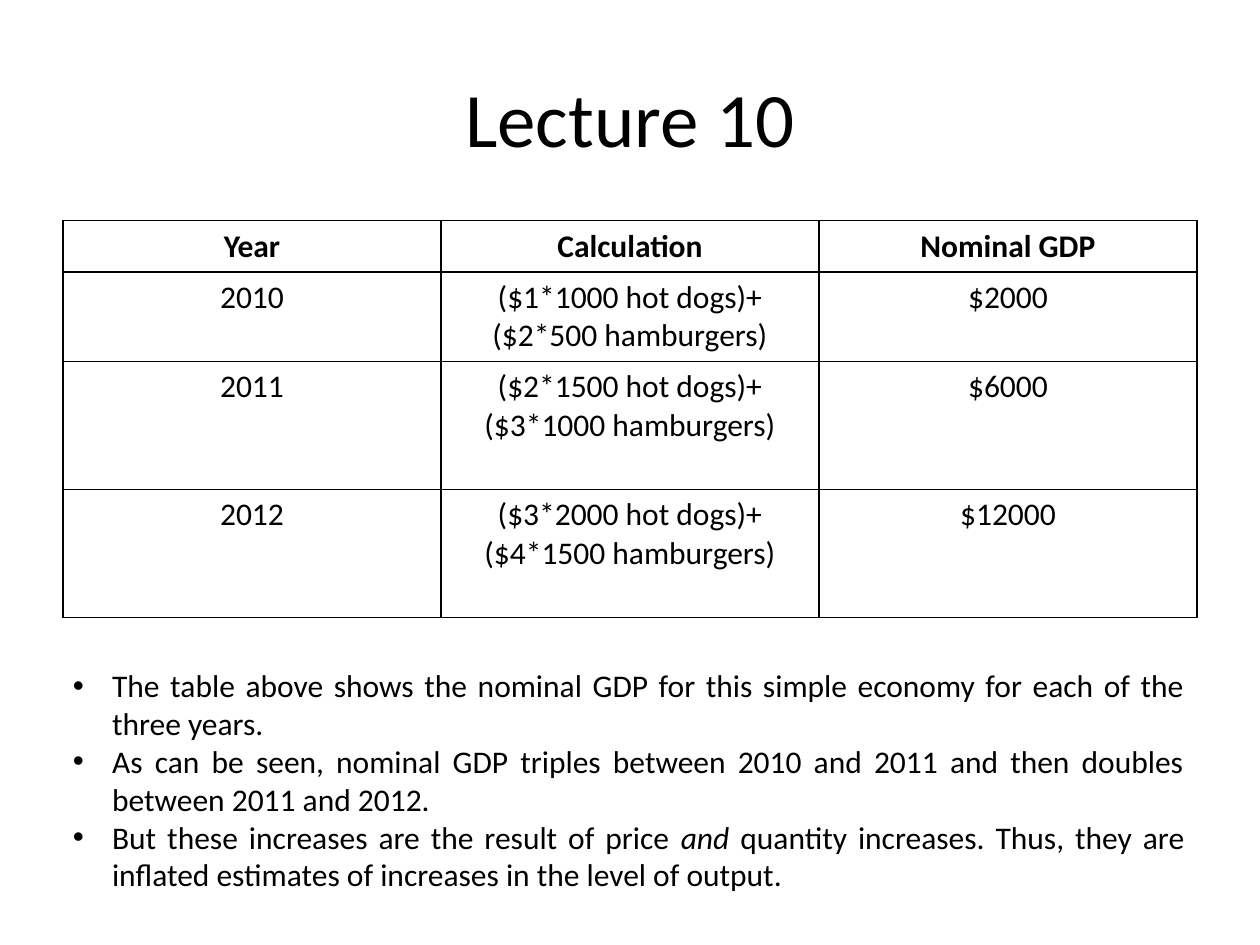
from lxml.etree import SubElement
from pptx import Presentation
from pptx.dml.color import RGBColor
from pptx.enum.text import MSO_ANCHOR, PP_ALIGN
from pptx.oxml.ns import qn
from pptx.util import Cm, Pt

HUES = {"ink": "000000", "page": "FFFFFF"}


def add_node(parent, tag, **attrs):
    return SubElement(parent, qn(tag), {key: str(val) for key, val in attrs.items()})


class Deck:
    """Holds the style and the current slide."""

    font = "Calibri"
    size = 18

    def __init__(self, wide, high):
        self.prs = Presentation()
        self.prs.slide_width, self.prs.slide_height = Cm(wide), Cm(high)
        self.slide = self.prs.slides.add_slide(self.prs.slide_layouts[6])
        fill = self.slide.background.fill
        fill.solid()
        fill.fore_color.rgb = RGBColor.from_string(HUES["page"])

    def style(self, para, align, size=None, bold=False):
        para.alignment = align
        for run in para.runs:
            run.font.name = self.font
            run.font.size = Pt(size or self.size)
            run.font.bold = bold
            run.font.color.rgb = RGBColor.from_string(HUES["ink"])

    def frame(self, *box):
        frame = self.slide.shapes.add_textbox(*map(Cm, box)).text_frame
        frame.word_wrap = True
        return frame

    def title(self, text, *box):
        frame = self.frame(*box)
        frame.vertical_anchor = MSO_ANCHOR.MIDDLE
        frame.text = text
        self.style(frame.paragraphs[0], PP_ALIGN.CENTER, 44)

    def border(self, cell):
        props = cell._tc.get_or_add_tcPr()
        for tag in ("a:lnL", "a:lnR", "a:lnT", "a:lnB"):
            line = add_node(props, tag, w=int(Pt(1)))
            add_node(add_node(line, "a:solidFill"), "a:srgbClr", val=HUES["ink"])

    def table(self, data, highs, left, top, wide):
        shape = self.slide.shapes.add_table(
            len(data), len(data[0]), Cm(left), Cm(top), Cm(wide), Cm(sum(highs)))
        grid = shape.table
        grid.first_row = grid.horz_banding = False
        for r, (texts, high) in enumerate(zip(data, highs)):
            grid.rows[r].height = Cm(high)
            for c, text in enumerate(texts):
                cell = grid.cell(r, c)
                cell.text = text
                self.style(cell.text_frame.paragraphs[0], PP_ALIGN.CENTER, bold=r == 0)
                self.border(cell)
                cell.fill.background()

    def bullets(self, items, *box):
        frame = self.frame(*box)
        for i, parts in enumerate(items):
            para = frame.paragraphs[0] if i == 0 else frame.add_paragraph()
            # Every second part of an item is italic
            for n, part in enumerate(parts):
                run = para.add_run()
                run.text = part
                run.font.italic = n % 2 == 1
            self.style(para, PP_ALIGN.JUSTIFY)
            props = para._p.get_or_add_pPr()
            props.set("marL", str(int(Cm(0.79))))
            props.set("indent", str(-int(Cm(0.79))))
            add_node(props, "a:buFont", typeface="Arial")
            add_node(props, "a:buChar", char="•")


def main():
    deck = Deck(25.4, 19.05)

    # Heading
    deck.title("Lecture 10", 1.27, 0.76, 22.86, 3.18)

    # Nominal GDP by year
    rows = [
        ("Year", "Calculation", "Nominal GDP"),
        ("2010", "($1*1000 hot dogs)+ ($2*500 hamburgers)", "$2000"),
        ("2011", "($2*1500 hot dogs)+ ($3*1000 hamburgers)", "$6000"),
        ("2012", "($3*2000 hot dogs)+ ($4*1500 hamburgers)", "$12000"),
    ]
    deck.table(rows, (1.03, 1.81, 2.58, 2.58), 1.27, 4.45, 22.86)

    # Remarks
    notes = [
        ("The table above shows the nominal GDP for this simple economy "
         "for each of the three years.",),
        ("As can be seen, nominal GDP triples between 2010 and 2011 "
         "and then doubles between 2011 and 2012.",),
        ("But these increases are the result of price ", "and ",
         "quantity increases. Thus, they are inflated estimates of increases "
         "in the level of output."),
    ]
    deck.bullets(notes, 1.22, 13.31, 22.91, 4.88)

    deck.prs.save("out.pptx")


if __name__ == "__main__":
    main()
